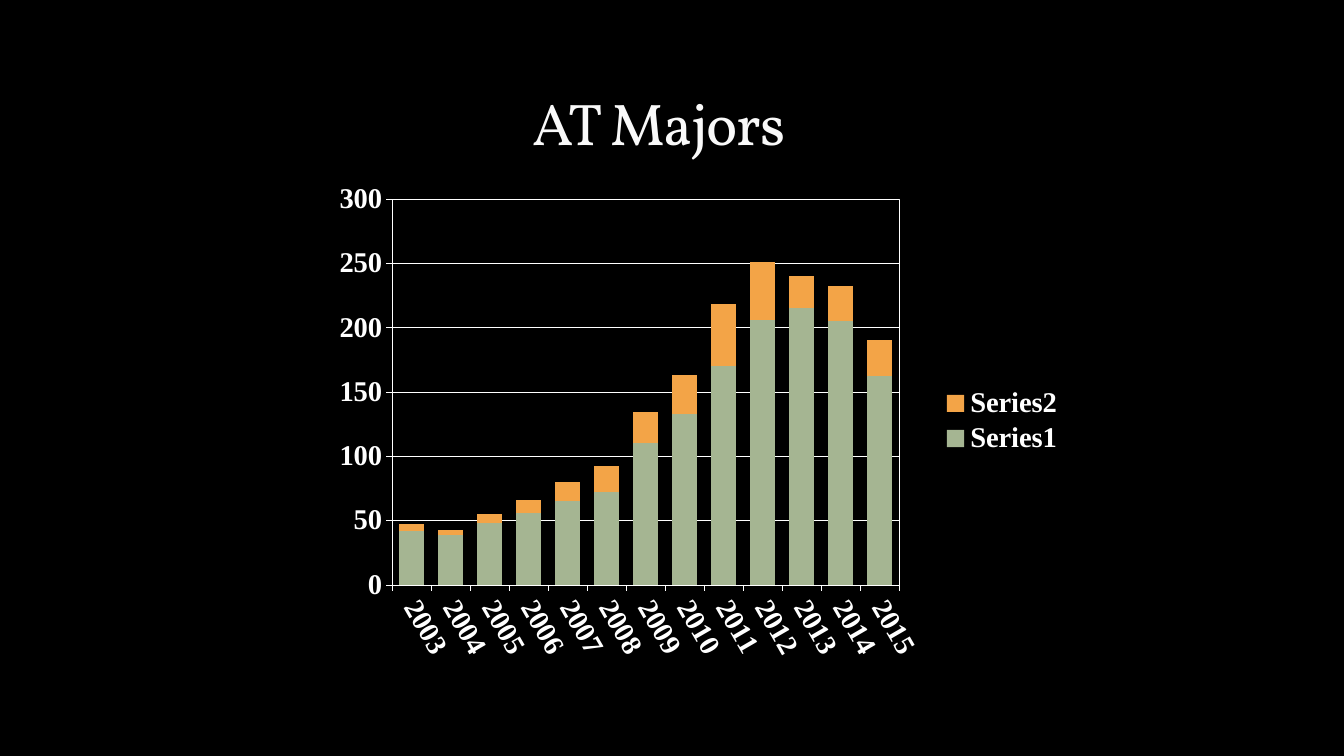
import pptx
import pptx.chart.data
import pptx.dml.color
import pptx.enum.chart
import pptx.enum.text
import pptx.oxml
import pptx.oxml.ns
import pptx.util

TITLE = "AT Majors"
YEARS = [str(year) for year in range(2003, 2016)]
SERIES = {
    "Series1": (42, 39, 48, 56, 65, 72, 110, 133, 170, 206, 215, 205, 162),
    "Series2": (5, 4, 7, 10, 15, 20, 24, 30, 48, 45, 25, 27, 28),
}
COLORS = {
    "back": "000000",
    "title": "F9F9F9",
    "white": "FFFFFF",
    "Series1": "A5B592",
    "Series2": "F3A447",
}
# left, top, width, height in px
SLIDE = (0, 0, 1344, 756)
HEAD = (523, 36, 306, 126)
CHART = (325, 173, 750, 496)
PLOT = (392, 199, 507, 386)
LEGEND = (942, 384, 120, 74)
PX = 914400 / 100.8
THIN = pptx.util.Pt(0.28)
NS = pptx.oxml.ns.nsdecls("c", "a")


def emu(box):
    return [round(side * PX) for side in box]


def rgb(name):
    return pptx.dml.color.RGBColor.from_string(COLORS[name])


def set_line(line):
    line.color.rgb = rgb("white")
    line.width = THIN


def place(part, box, index, inner=False):
    """Pin a chart part to a px box, given as fractions of the chart."""
    for old in part.findall(pptx.oxml.ns.qn("c:layout")):
        part.remove(old)
    spots = {
        "x": (box[0] - CHART[0]) / CHART[2],
        "y": (box[1] - CHART[1]) / CHART[3],
        "w": box[2] / CHART[2],
        "h": box[3] / CHART[3],
    }
    target = '<c:layoutTarget val="inner"/>' if inner else ""
    modes = '<c:xMode val="edge"/><c:yMode val="edge"/>'
    sides = "".join(f'<c:{k} val="{v:.4f}"/>' for k, v in spots.items())
    part.insert(index, pptx.oxml.parse_xml(
        f"<c:layout {NS}><c:manualLayout>{target}{modes}{sides}"
        "</c:manualLayout></c:layout>"))


def add_title(slide):
    frame = slide.shapes.add_textbox(*emu(HEAD)).text_frame
    frame.word_wrap = True
    frame.vertical_anchor = pptx.enum.text.MSO_ANCHOR.BOTTOM
    para = frame.paragraphs[0]
    run = para.add_run()
    run.text = TITLE
    para.font.name = "Vollkorn"
    para.font.size = pptx.util.Pt(42)
    para.font.color.rgb = rgb("title")
    run.font._element.set("spc", "-100")


def add_chart(slide):
    data = pptx.chart.data.CategoryChartData()
    data.categories = YEARS
    for name, values in SERIES.items():
        data.add_series(name, values)
    kind = pptx.enum.chart.XL_CHART_TYPE.COLUMN_STACKED
    chart = slide.shapes.add_chart(kind, *emu(CHART), data).chart
    chart.has_title = False
    chart.font.name = "Times New Roman"
    chart.font.size = pptx.util.Pt(20.4)
    chart.font.bold = True
    chart.font.color.rgb = rgb("white")

    bars = chart.plots[0]
    bars.gap_width = 55
    bars.overlap = 100
    bars.vary_by_categories = False
    for series in bars.series:
        series.format.fill.solid()
        series.format.fill.fore_color.rgb = rgb(series.name)

    for axis in (chart.category_axis, chart.value_axis):
        axis.major_tick_mark = pptx.enum.chart.XL_TICK_MARK.OUTSIDE
        set_line(axis.format.line)
        axis.tick_labels.font.size = pptx.util.Pt(20.4)
    years, count = chart.category_axis, chart.value_axis
    slant = years._element.find(".//" + pptx.oxml.ns.qn("a:bodyPr"))
    slant.set("rot", str(60 * 60000))
    slant.set("vert", "horz")
    count.minimum_scale, count.maximum_scale = 0, 300
    count.major_unit = 50
    count.has_major_gridlines = True
    set_line(count.major_gridlines.format.line)

    chart.has_legend = True
    chart.legend.position = pptx.enum.chart.XL_LEGEND_POSITION.RIGHT
    chart.legend.include_in_layout = False
    place(chart.legend._element, LEGEND, 1)

    area = chart._chartSpace.chart.plotArea
    place(area, PLOT, 0, inner=True)
    area.append(pptx.oxml.parse_xml(
        f'<c:spPr {NS}><a:noFill/><a:ln w="{int(THIN)}"><a:solidFill>'
        f'<a:srgbClr val="{COLORS["white"]}"/></a:solidFill></a:ln></c:spPr>'))


def main():
    deck = pptx.Presentation()
    deck.slide_width, deck.slide_height = emu(SLIDE)[2:]
    slide = deck.slides.add_slide(deck.slide_layouts[6])
    slide.background.fill.solid()
    slide.background.fill.fore_color.rgb = rgb("back")
    add_title(slide)
    add_chart(slide)
    deck.save("out.pptx")


if __name__ == "__main__":
    main()
